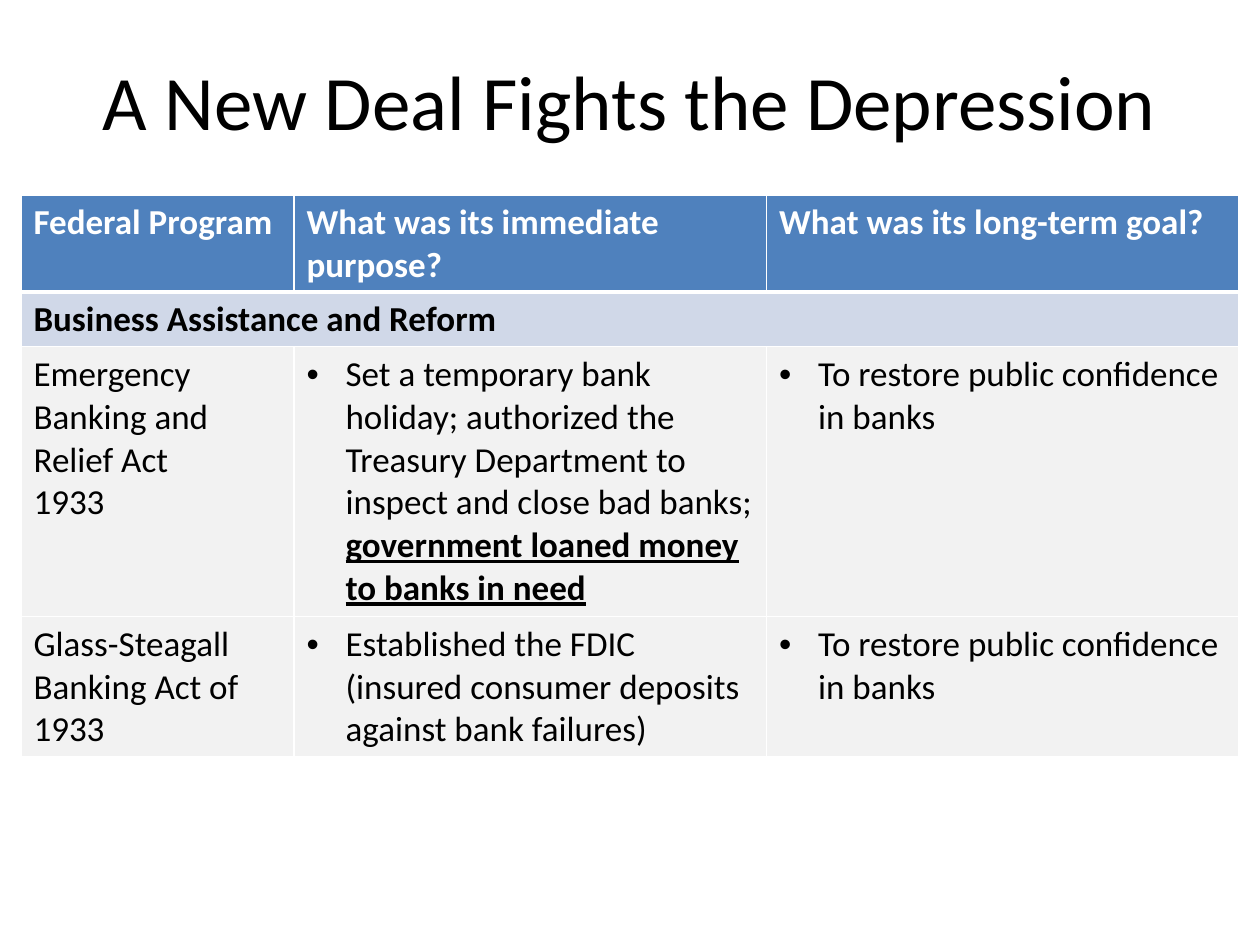
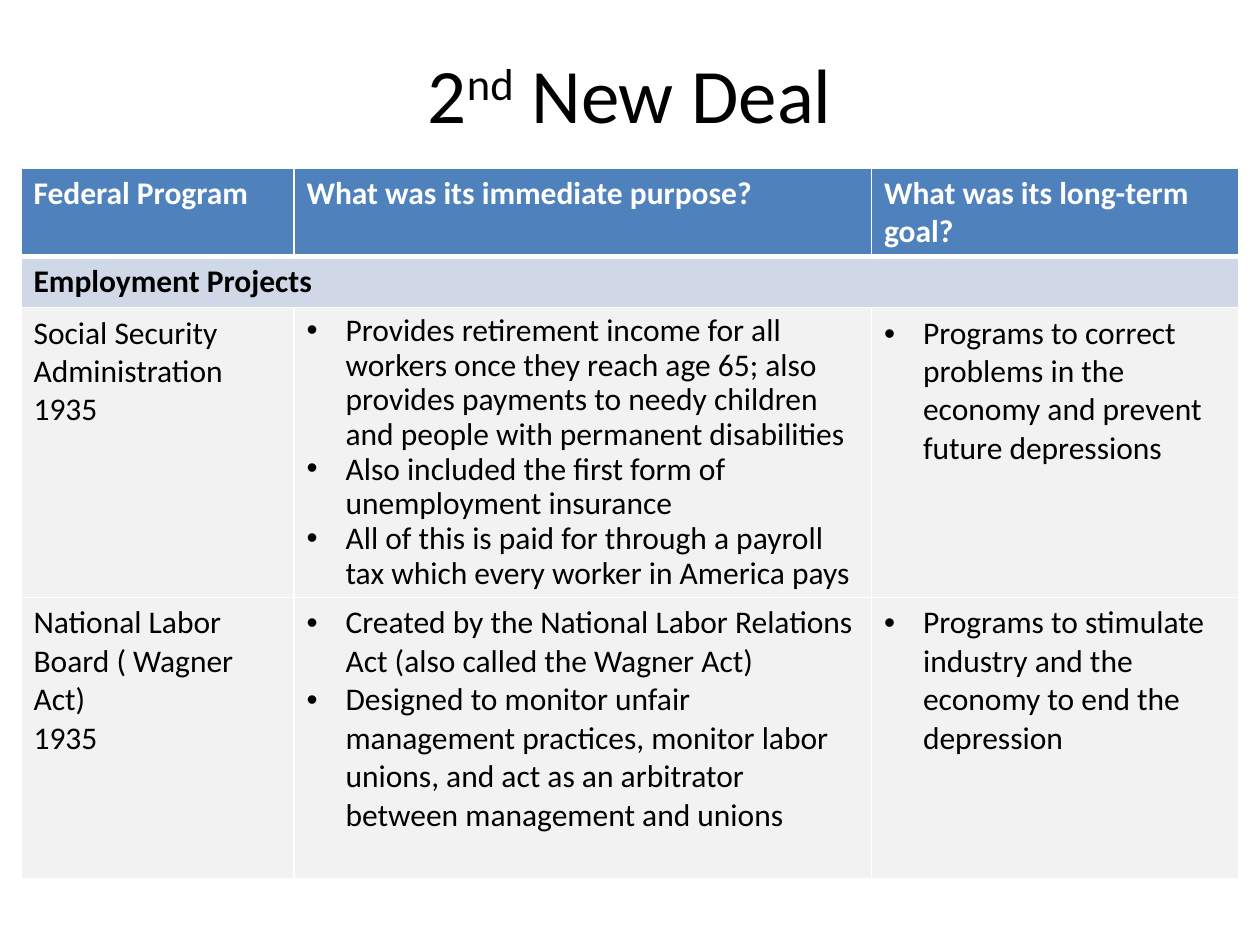
from dataclasses import dataclass

from lxml.etree import SubElement
from pptx import Presentation
from pptx.dml.color import RGBColor
from pptx.enum.text import MSO_ANCHOR, PP_ALIGN
from pptx.oxml import parse_xml
from pptx.oxml.ns import nsdecls, qn
from pptx.util import Inches, Pt


@dataclass(frozen=True)
class Theme:
    font: str = "Calibri"
    title_size: int = 44
    text: str = "000000"
    header_text: str = "FFFFFF"
    header_fill: str = "4F81BD"
    section_fill: str = "D0D8E8"
    body_fill: str = "F2F2F2"
    border: str = "FFFFFF"
    thin: int = 1
    thick: int = 3


THEME = Theme()
SLIDE_WIDTH, SLIDE_HEIGHT = Inches(10), Inches(7.5)
GRID_COLUMNS, GRID_ROWS = 120, 90
TABLE_LEFT = 2
BULLET_INDENT = Inches(0.31)
PROGRAM, PURPOSE, GOAL = range(3)
HEADINGS = ("Federal Program", "What was its immediate purpose?",
            "What was its long-term goal?")
STRONG = {"bold": True, "underline": True}
SUPERSCRIPT = {"baseline": 30000}


def across(columns):
    return round(SLIDE_WIDTH * columns / GRID_COLUMNS)


def down(rows):
    return round(SLIDE_HEIGHT * rows / GRID_ROWS)


def add_runs(paragraph, content):
    """Content is a string, or a list of (text, style) pairs."""
    pieces = [(content, {})] if isinstance(content, str) else content
    for text, style in pieces:
        run = paragraph.add_run()
        run.text = text
        for name, value in style.items():
            if name == "baseline":
                run.font._element.set(name, str(value))
            else:
                setattr(run.font, name, value)


def style_font(paragraph, size, color, bold=False):
    font = paragraph.font
    font.name, font.size, font.bold = THEME.font, Pt(size), bold
    font.color.rgb = RGBColor.from_string(color)


def add_bullet(paragraph):
    properties = paragraph._p.get_or_add_pPr()
    properties.set("marL", str(BULLET_INDENT))
    properties.set("indent", str(-BULLET_INDENT))
    SubElement(properties, qn("a:buFont"), typeface="Arial")
    SubElement(properties, qn("a:buChar"), char="•")


def set_borders(cell, bottom):
    properties = cell._tc.get_or_add_tcPr()
    widths = {"lnL": THEME.thin, "lnR": THEME.thin, "lnT": THEME.thin, "lnB": bottom}
    for position, (side, width) in enumerate(widths.items()):
        properties.insert(position, parse_xml(
            f'<a:{side} {nsdecls("a")} w="{Pt(width)}"><a:solidFill>'
            f'<a:srgbClr val="{THEME.border}"/></a:solidFill></a:{side}>'))


def fill_cell(cell, contents, fill, size, color=THEME.text, bold=False,
              bulleted=False, line_spacing=None, bottom=THEME.thin):
    cell.fill.solid()
    cell.fill.fore_color.rgb = RGBColor.from_string(fill)
    set_borders(cell, bottom)
    frame = cell.text_frame
    for index, content in enumerate(contents):
        paragraph = frame.add_paragraph() if index else frame.paragraphs[0]
        if line_spacing:
            paragraph.line_spacing = line_spacing
        if bulleted:
            add_bullet(paragraph)
        style_font(paragraph, size, color, bold)
        add_runs(paragraph, content)


def add_title(slide, content, top, height):
    margin = GRID_COLUMNS / 20
    box = slide.shapes.add_textbox(across(margin), down(top),
                                   across(GRID_COLUMNS - 2 * margin), down(height))
    frame = box.text_frame
    frame.word_wrap = True
    frame.vertical_anchor = MSO_ANCHOR.MIDDLE
    paragraph = frame.paragraphs[0]
    paragraph.alignment = PP_ALIGN.CENTER
    style_font(paragraph, THEME.title_size, THEME.text)
    add_runs(paragraph, content)


def add_program_table(slide, top, widths, heights, size, section, programs,
                      tight_cells=()):
    """tight_cells lists (program index, column) pairs set at 90% line spacing."""
    table = slide.shapes.add_table(
        len(heights), len(widths), across(TABLE_LEFT), down(top),
        across(sum(widths)), down(sum(heights))).table
    table.first_row = table.horz_banding = False
    for column, width in zip(table.columns, widths):
        column.width = across(width)
    for row, height in zip(table.rows, heights):
        row.height = down(height)

    for column, heading in enumerate(HEADINGS):
        fill_cell(table.cell(0, column), [heading], THEME.header_fill, size,
                  THEME.header_text, bold=True, bottom=THEME.thick)
        fill_cell(table.cell(1, column), [section] if column == PROGRAM else [],
                  THEME.section_fill, size, bold=True)
    table.cell(1, PROGRAM).merge(table.cell(1, GOAL))

    for index, program in enumerate(programs):
        for column, contents in enumerate(program):
            fill_cell(table.cell(index + 2, column), contents, THEME.body_fill, size,
                      bulleted=column != PROGRAM,
                      line_spacing=0.9 if (index, column) in tight_cells else None)


def build_first_new_deal(slide):
    add_title(slide, "A New Deal Fights the Depression", top=2, height=15)
    goal = ["To restore public confidence in banks"]
    add_program_table(
        slide, top=18.6, widths=(26, 45, 45), heights=(9.2, 5.2, 25.7, 13.4), size=20,
        section="Business Assistance and Reform",
        programs=[
            (["Emergency Banking and Relief Act", "1933"],
             [[("Set a temporary bank holiday; authorized the Treasury Department "
                "to inspect and close bad banks; ", {}),
               ("government loaned money to banks in need", STRONG)]],
             goal),
            (["Glass-Steagall Banking Act of 1933"],
             ["Established the FDIC (insured consumer deposits against bank failures)"],
             goal),
        ])


def build_second_new_deal(slide):
    add_title(slide, [("2", {}), ("nd", SUPERSCRIPT), (" New Deal", {})],
              top=3.6, height=10.4)
    add_program_table(
        slide, top=16, widths=(26, 55, 35), heights=(8.4, 4.9, 27.6, 26.8), size=18,
        section="Employment Projects",
        programs=[
            (["Social Security Administration", "1935"],
             ["Provides retirement income for all workers once they reach age 65; also "
              "provides payments to needy children and people with permanent disabilities",
              "Also included the first form of unemployment insurance",
              "All of this is paid for through a payroll tax which every worker in "
              "America pays"],
             ["Programs to correct problems in the economy and prevent future "
              "depressions"]),
            (["National Labor Board ( Wagner Act)", "1935"],
             ["Created by the National Labor Relations Act (also called the Wagner Act)",
              "Designed to monitor unfair management practices, monitor labor unions, "
              "and act as an arbitrator between management and unions"],
             ["Programs to stimulate industry and the economy to end the depression"]),
        ],
        tight_cells={(0, PURPOSE)})


def main():
    presentation = Presentation()
    presentation.slide_width, presentation.slide_height = SLIDE_WIDTH, SLIDE_HEIGHT
    blank = presentation.slide_layouts[6]
    for build in (build_first_new_deal, build_second_new_deal):
        build(presentation.slides.add_slide(blank))
    presentation.save("out.pptx")


if __name__ == "__main__":
    main()
